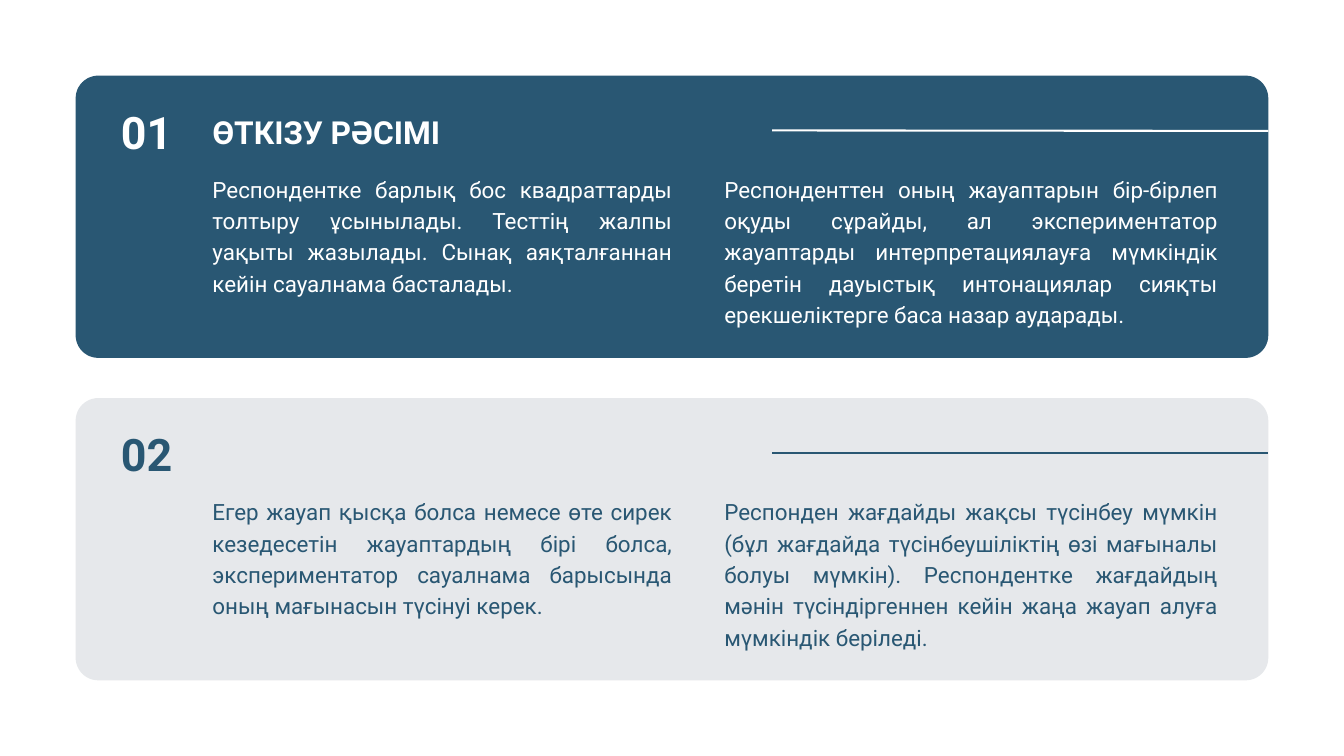
from lxml import etree
from pptx import Presentation
from pptx.dml.color import RGBColor
from pptx.enum.shapes import MSO_CONNECTOR, MSO_SHAPE
from pptx.enum.text import MSO_ANCHOR, MSO_AUTO_SIZE, PP_ALIGN
from pptx.oxml.ns import qn
from pptx.util import Cm, Pt

BLUE, GREY, WHITE = "295773", "E6E8EB", "FFFFFF"
CARD_LEFT, CARD_TOP, CARD_WIDTH, CARD_HEIGHT = 2.86, 2.86, 45.08, 10.67
CARD_PITCH = 12.19


def color(value):
    return RGBColor.from_string(value)


def write_text(shape, text, box, size, text_color, bold=False, align=PP_ALIGN.LEFT):
    shape.left, shape.top, shape.width, shape.height = [Cm(value) for value in box]
    frame = shape.text_frame
    frame.text = text
    frame_format = {
        "margin_left": 0, "margin_top": 0, "margin_right": 0, "margin_bottom": 0,
        "word_wrap": True, "auto_size": MSO_AUTO_SIZE.NONE,
        "vertical_anchor": MSO_ANCHOR.TOP,
    }
    for name, value in frame_format.items():
        setattr(frame, name, value)
    paragraph = frame.paragraphs[0]
    paragraph.alignment = align
    paragraph.line_spacing = Pt(size * 1.4)
    font = paragraph.runs[0].font
    for name, value in {"name": "Roboto", "size": Pt(size), "bold": bold}.items():
        setattr(font, name, value)
    font.color.rgb = color(text_color)


presentation = Presentation()
presentation.slide_width, presentation.slide_height = Cm(50.8), Cm(28.58)
slide = presentation.slides.add_slide(presentation.slide_layouts[5])
shapes = slide.shapes

# Number, card colour, text colour, drop of the rule, left and right text
cards = [
    ("01", BLUE, WHITE, 0.02,
     "Респондентке барлық бос квадраттарды толтыру ұсынылады. Тесттің жалпы уақыты "
     "жазылады. Сынақ аяқталғаннан кейін сауалнама басталады.",
     "Респонденттен оның жауаптарын бір-бірлеп оқуды сұрайды, ал экспериментатор "
     "жауаптарды интерпретациялауға мүмкіндік беретін дауыстық интонациялар сияқты "
     "ерекшеліктерге баса назар аударады."),
    ("02", GREY, BLUE, 0,
     "Егер жауап қысқа болса немесе өте сирек кезедесетін жауаптардың бірі болса, "
     "экспериментатор сауалнама барысында оның мағынасын түсінуі керек.",
     "Респонден жағдайды жақсы түсінбеу мүмкін (бұл жағдайда түсінбеушіліктің өзі "
     "мағыналы болуы мүмкін). Респондентке жағдайдың мәнін түсіндіргеннен кейін "
     "жаңа жауап алуға мүмкіндік беріледі."),
]

for index, (number, fill, text_color, drop, left_text, right_text) in enumerate(cards):
    top = CARD_TOP + index * CARD_PITCH

    # Rounded card
    card = shapes.add_shape(MSO_SHAPE.ROUNDED_RECTANGLE, Cm(CARD_LEFT), Cm(top),
                            Cm(CARD_WIDTH), Cm(CARD_HEIGHT))
    card.adjustments[0] = 0.08
    card.shadow.inherit = False
    card.fill.solid()
    card.fill.fore_color.rgb = color(fill)
    card.line.fill.background()

    # Rule running to the right edge
    rule_top = top + 2.07
    rule = shapes.add_connector(MSO_CONNECTOR.STRAIGHT, Cm(29.18), Cm(rule_top),
                                Cm(CARD_LEFT + CARD_WIDTH), Cm(rule_top + drop))
    rule.line.color.rgb = color(text_color)
    rule.line.width = Pt(2.25)
    etree.SubElement(rule.element.spPr, qn("a:effectLst"))

    # Number and two text columns
    number_box = shapes.add_textbox(0, 0, 0, 0)
    write_text(number_box, number, (4.57, top + 0.75, 2.67, 2.34), 48, text_color, bold=True)
    columns = [(left_text, 8.03, 17.37, 4.65), (right_text, 27.38, 18.64, 5.82)]
    for text, left, width, height in columns:
        column = shapes.add_textbox(0, 0, 0, 0)
        write_text(column, text, (left, top + 3.62, width, height), 24, text_color,
                   align=PP_ALIGN.JUSTIFY)

# Title, brought in front of the cards
title = shapes.title
write_text(title, "ӨТКІЗУ РӘСІМІ", (8.03, 4.01, 30.86, 1.68), 34, WHITE, bold=True)
title.element.getparent().append(title.element)

presentation.save("out.pptx")
